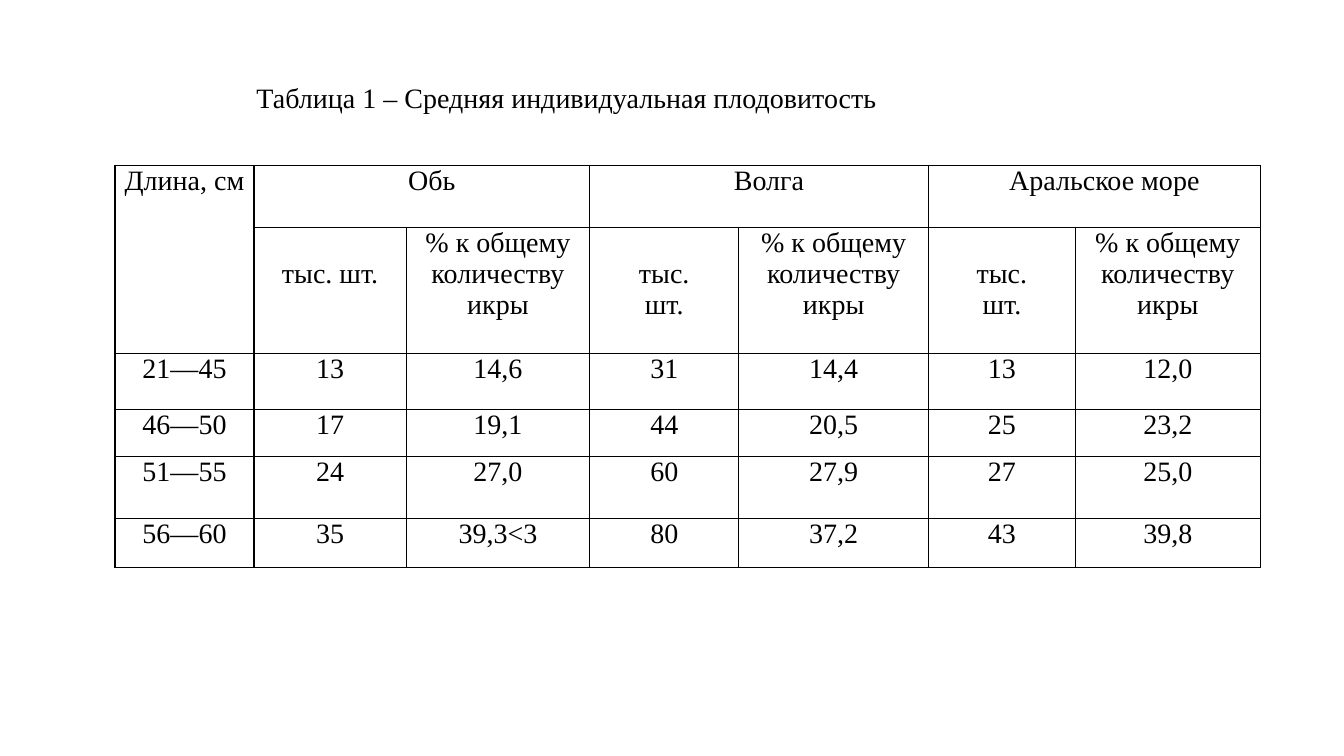
from dataclasses import dataclass

import pptx
import pptx.dml.color
import pptx.enum.text
import pptx.oxml
import pptx.oxml.ns
import pptx.util
from pptx.util import Cm

BLACK = pptx.dml.color.RGBColor(0, 0, 0)
FONT_NAME = "Times New Roman"
FONT_SIZE = pptx.util.Pt(20)
FIRST_LINE_INDENT = Cm(0.5)
LINE_HEIGHT = Cm(0.78)

COLUMN_WIDTHS = [3.5, 3.84, 4.62, 3.76, 4.78, 3.7, 4.66]
ROW_HEIGHTS = [1.56, 3.18, 1.4, 1.19, 1.56, 1.24]
SHARE_HEADING = "% к общему количеству\nикры"
FECUNDITY = [
    ["21—45", "13", "14,6", "31", "14,4", "13", "12,0"],
    ["46—50", "17", "19,1", "44", "20,5", "25", "23,2"],
    ["51—55", "24", "27,0", "60", "27,9", "27", "25,0"],
    ["56—60", "35", "39,3<3", "80", "37,2", "43", "39,8"],
]


@dataclass
class Heading:
    row: int
    column: int
    text: str
    row_span: int = 1
    column_span: int = 1
    indented: bool = False
    top_margin: int = 0


HEADINGS = [
    Heading(0, 0, "Длина, см", row_span=2),
    Heading(0, 1, "Обь", column_span=2, indented=True),
    Heading(0, 3, "Волга", column_span=2, indented=True),
    Heading(0, 5, "Аральское море", column_span=2, indented=True),
    Heading(1, 1, "тыс. шт.", top_margin=LINE_HEIGHT),
    Heading(1, 2, SHARE_HEADING),
    Heading(1, 3, "тыс.\nшт.", top_margin=LINE_HEIGHT),
    Heading(1, 4, SHARE_HEADING),
    Heading(1, 5, "тыс.\nшт.", top_margin=LINE_HEIGHT),
    Heading(1, 6, "% к общему\nколичеству\nикры"),
]


def write_centred(text_frame: pptx.text.text.TextFrame, text: str, indented: bool = False) -> None:
    text_frame.text = text
    for paragraph in text_frame.paragraphs:
        paragraph.alignment = pptx.enum.text.PP_ALIGN.CENTER
        if indented:
            properties = paragraph._p.get_or_add_pPr()
            properties.set("marL", "0")
            properties.set("indent", str(int(FIRST_LINE_INDENT)))
        paragraph.font.name = FONT_NAME
        paragraph.font.size = FONT_SIZE
        paragraph.font.color.rgb = BLACK


def format_cell(cell: pptx.table._Cell) -> None:
    """Clear the fill, set the margins and draw a thin border on each side."""
    cell.margin_left = cell.margin_right = Cm(0.08)
    cell.margin_top = cell.margin_bottom = 0
    cell.fill.background()
    properties = cell._tc.get_or_add_tcPr()
    for position, side in enumerate(["lnL", "lnR", "lnT", "lnB"]):
        border = pptx.oxml.parse_xml(
            f'<a:{side} {pptx.oxml.ns.nsdecls("a")} w="{pptx.util.Pt(1)}">'
            f'<a:solidFill><a:srgbClr val="{BLACK}"/></a:solidFill></a:{side}>'
        )
        properties.insert(position, border)


def add_fecundity_table(slide: pptx.slide.Slide) -> None:
    table = slide.shapes.add_table(
        len(ROW_HEIGHTS), len(COLUMN_WIDTHS), Cm(2.9), Cm(4.17),
        Cm(sum(COLUMN_WIDTHS)), Cm(sum(ROW_HEIGHTS)),
    ).table
    table.first_row = table.horz_banding = False
    for column, width in zip(table.columns, COLUMN_WIDTHS):
        column.width = Cm(width)
    for row, height in zip(table.rows, ROW_HEIGHTS):
        row.height = Cm(height)
    for cell in table.iter_cells():
        format_cell(cell)

    for heading in HEADINGS:
        cell = table.cell(heading.row, heading.column)
        if heading.row_span > 1 or heading.column_span > 1:
            cell.merge(table.cell(
                heading.row + heading.row_span - 1,
                heading.column + heading.column_span - 1,
            ))
        cell.margin_top = heading.top_margin
        write_centred(cell.text_frame, heading.text, heading.indented)

    for row_index, values in enumerate(FECUNDITY, start=2):
        for column_index, value in enumerate(values):
            write_centred(table.cell(row_index, column_index).text_frame, value)


def add_caption(slide: pptx.slide.Slide) -> None:
    caption = slide.shapes.add_textbox(Cm(3.68), Cm(1.88), Cm(20.7), Cm(1.12))
    text_frame = caption.text_frame
    text_frame.word_wrap = True
    text_frame.vertical_anchor = pptx.enum.text.MSO_ANCHOR.MIDDLE
    text_frame.auto_size = pptx.enum.text.MSO_AUTO_SIZE.SHAPE_TO_FIT_TEXT
    write_centred(text_frame, "Таблица 1 – Средняя индивидуальная плодовитость", indented=True)


def main() -> None:
    presentation = pptx.Presentation()
    presentation.slide_width = Cm(33.87)
    presentation.slide_height = Cm(19.05)
    slide = presentation.slides.add_slide(presentation.slide_layouts[6])
    add_fecundity_table(slide)
    add_caption(slide)
    presentation.save("out.pptx")


if __name__ == "__main__":
    main()
